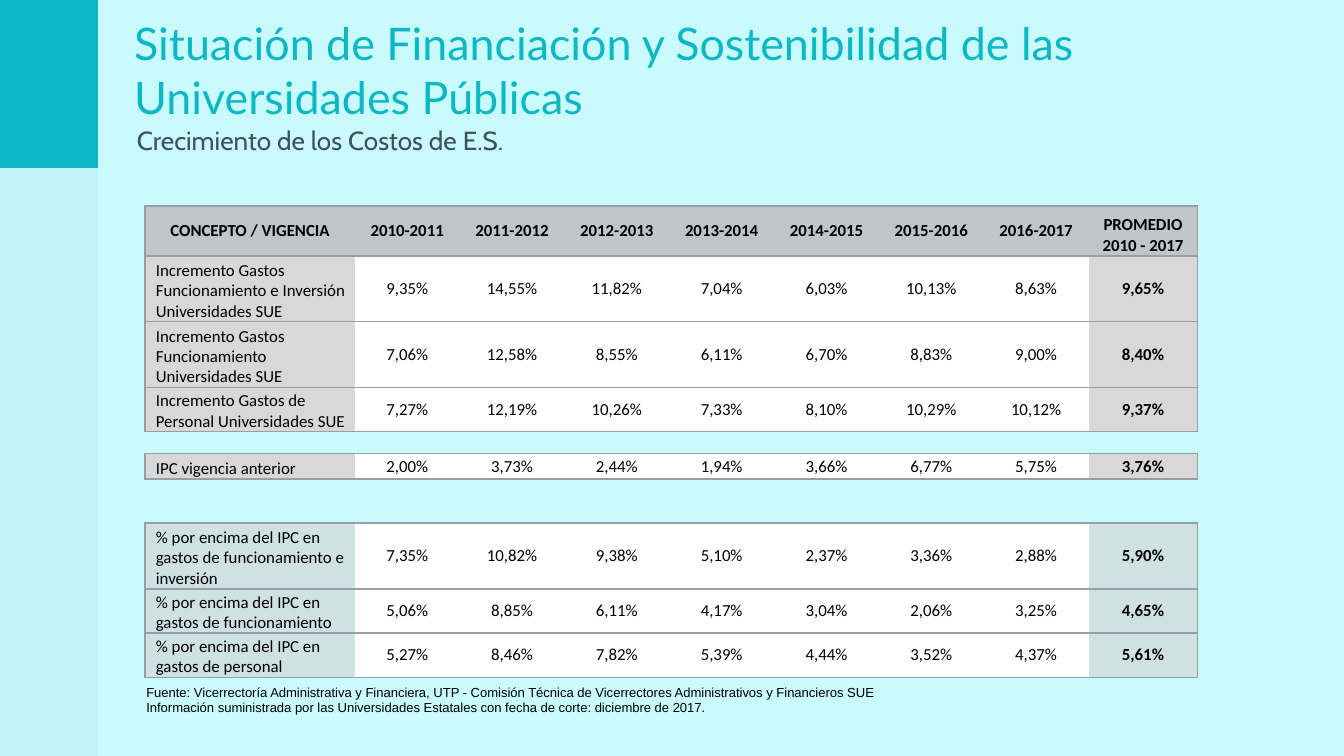
from lxml import etree
from pptx import Presentation
from pptx.dml.color import RGBColor
from pptx.enum.shapes import MSO_SHAPE
from pptx.enum.text import MSO_ANCHOR, MSO_AUTO_SIZE, PP_ALIGN
from pptx.oxml.ns import qn
from pptx.util import Inches, Pt

RECTANGLE = MSO_SHAPE.RECTANGLE
TOP, MIDDLE, BOTTOM = MSO_ANCHOR.TOP, MSO_ANCHOR.MIDDLE, MSO_ANCHOR.BOTTOM
LEFT, CENTER, JUSTIFY = PP_ALIGN.LEFT, PP_ALIGN.CENTER, PP_ALIGN.JUSTIFY
GROW = MSO_AUTO_SIZE.SHAPE_TO_FIT_TEXT

# Grid of 100 columns by 56.25 rows (16:9), each step a tenth of an inch
COLUMNS, ROWS, STEP = 100, 56.25, 0.1

TEAL, PALE, SLATE = "0DB7C4", "C9FAFC", "3E5160"
BLACK, WHITE, RULE = "000000", "FFFFFF", "969FA7"
HEADER, GREY, MINT = "C0C5CA", "D8D8D8", "CFE1E3"

YEARS = [f"{year}-{year + 1}" for year in range(2010, 2017)]
COLUMN_WIDTHS = [15.6] + [7.8] * len(YEARS) + [8.1]

# Row height, side colour, concept and values; spacer rows have no concept
SPACER = (1.63, None, "", [])
TABLE_ROWS = [
    (3.7, HEADER, "CONCEPTO / VIGENCIA", YEARS + ["PROMEDIO 2010 - 2017"]),
    (4.9, GREY, "Incremento Gastos Funcionamiento e Inversión Universidades SUE",
     "9,35% 14,55% 11,82% 7,04% 6,03% 10,13% 8,63% 9,65%".split()),
    (4.9, GREY, "Incremento Gastos Funcionamiento Universidades SUE",
     "7,06% 12,58% 8,55% 6,11% 6,70% 8,83% 9,00% 8,40%".split()),
    (3.3, GREY, "Incremento Gastos de Personal Universidades SUE",
     "7,27% 12,19% 10,26% 7,33% 8,10% 10,29% 10,12% 9,37%".split()),
    SPACER,
    (1.9, GREY, "IPC vigencia anterior",
     "2,00% 3,73% 2,44% 1,94% 3,66% 6,77% 5,75% 3,76%".split()),
    SPACER,
    SPACER,
    (4.9, MINT, "% por encima del IPC en gastos de funcionamiento e inversión",
     "7,35% 10,82% 9,38% 5,10% 2,37% 3,36% 2,88% 5,90%".split()),
    (3.3, MINT, "% por encima del IPC en gastos de funcionamiento",
     "5,06% 8,85% 6,11% 4,17% 3,04% 2,06% 3,25% 4,65%".split()),
    (3.3, MINT, "% por encima del IPC en gastos de personal",
     "5,27% 8,46% 7,82% 5,39% 4,44% 3,52% 4,37% 5,61%".split()),
]
OPEN_BELOW, OPEN_ABOVE = 6, 7  # the two spacer rows with no rule between them


def color(value):
    return RGBColor.from_string(value)


def grid(*steps):
    return [Inches(step * STEP) for step in steps]


class SlideBuilder:
    def __init__(self, deck):
        self.page = deck.slides.add_slide(deck.slide_layouts[6])
        self.page.background.fill.solid()
        self.page.background.fill.fore_color.rgb = color(PALE)

    def band(self, place, fill, opacity=100):
        shape = self.page.shapes.add_shape(RECTANGLE, *grid(*place))
        shape.shadow.inherit = False
        shape.line.fill.background()
        shape.fill.solid()
        shape.fill.fore_color.rgb = color(fill)
        if opacity < 100:
            tint = shape.fill._xPr.find(f".//{qn('a:srgbClr')}")
            etree.SubElement(tint, qn("a:alpha"), val=str(opacity * 1000))

    def style(self, frame, font, size, ink, align=LEFT, bold=False):
        for para in frame.paragraphs:
            para.alignment = align
            for span in para.runs:
                span.font.name, span.font.size, span.font.bold = font, Pt(size), bold
                span.font.color.rgb = color(ink)

    def text(self, place, words, font, size, ink, align=LEFT, anchor=TOP,
             grow=False, inset=0.5):
        box = self.page.shapes.add_textbox(*grid(*place))
        frame = box.text_frame
        frame.word_wrap = True
        frame.vertical_anchor = anchor
        frame.margin_top, frame.margin_bottom = grid(inset, inset)
        if grow:
            frame.auto_size = GROW
        frame.text = words
        self.style(frame, font, size, ink, align)

    def borders(self, cell, sides):
        properties = cell._tc.get_or_add_tcPr()
        for index, side in enumerate("LRTB"):
            line = etree.Element(qn(f"a:ln{side}"), w=str(Pt(1)))
            properties.insert(index, line)
            if side in sides:
                solid = etree.SubElement(line, qn("a:solidFill"))
                etree.SubElement(solid, qn("a:srgbClr"), val=RULE)
            else:
                etree.SubElement(line, qn("a:noFill"))

    def cell(self, cell, words, fill, sides, align, anchor, bold):
        cell.margin_left = cell.margin_right = cell.margin_top = cell.margin_bottom = 0
        cell.vertical_anchor = anchor
        if fill:
            cell.fill.solid()
            cell.fill.fore_color.rgb = color(fill)
        else:
            cell.fill.background()
        self.borders(cell, sides)
        if words:
            cell.text_frame.text = words
            self.style(cell.text_frame, "Calibri", 9, BLACK, align, bold)
        else:
            # A small size keeps the empty row low
            etree.SubElement(cell.text_frame.paragraphs[0]._p, qn("a:endParaRPr"), sz="600")

    def table(self, left, top, widths, rows):
        height = sum(row[0] for row in rows)
        place = grid(left, top, sum(widths), height)
        table = self.page.shapes.add_table(len(rows), len(widths), *place).table
        table.first_row = table.horz_banding = False
        for column, width in zip(table.columns, grid(*widths)):
            column.width = width
        last = len(widths) - 1
        for r, (row_height, side_fill, concept, values) in enumerate(rows):
            table.rows[r].height = Inches(row_height * STEP)
            header = side_fill == HEADER
            words = [concept, *values] if concept else [""] * len(widths)
            for c, content in enumerate(words):
                edge = c in (0, last)
                label = c == 0 and concept and not header
                fill = side_fill if edge or header or not concept else WHITE
                sides = {OPEN_BELOW: "T", OPEN_ABOVE: "B"}.get(r, "TB")
                if concept and edge:
                    sides += "R" if c else "L"
                low = label or (header and c == last)
                cell = table.cell(r, c)
                self.cell(cell, content, fill, sides, LEFT if label else CENTER,
                          BOTTOM if low else MIDDLE, header or c == last)
                if label:
                    cell.margin_left = Inches(0.08)


def main():
    deck = Presentation()
    deck.slide_width, deck.slide_height = grid(COLUMNS, ROWS)
    slide = SlideBuilder(deck)

    # Side bands
    slide.band((0, 0, 7.3, ROWS), BLACK, opacity=3)
    slide.band((0, 0, 7.3, 12.5), TEAL)

    # Heading
    slide.text((9, 0.9, 76.7, 9.3),
               "Situación de Financiación y Sostenibilidad de las Universidades Públicas",
               "Lato", 24, TEAL, anchor=BOTTOM, inset=1)
    slide.text((9.2, 8.8, 45.1, 3.4), "Crecimiento de los Costos de E.S.",
               "Cabin", 14, SLATE, align=JUSTIFY, grow=True)

    # Cost growth table
    slide.table(10.8, 15.33, COLUMN_WIDTHS, TABLE_ROWS)

    # Source note
    slide.text((9.9, 50.4, 73.8, 3.4),
               "Fuente: Vicerrectoría Administrativa y Financiera, UTP - Comisión Técnica "
               "de Vicerrectores Administrativos y Financieros SUE\n"
               "Información suministrada por las Universidades Estatales con fecha de "
               "corte: diciembre de 2017.", "Arial", 7, BLACK, grow=True)

    deck.save("out.pptx")


if __name__ == "__main__":
    main()
